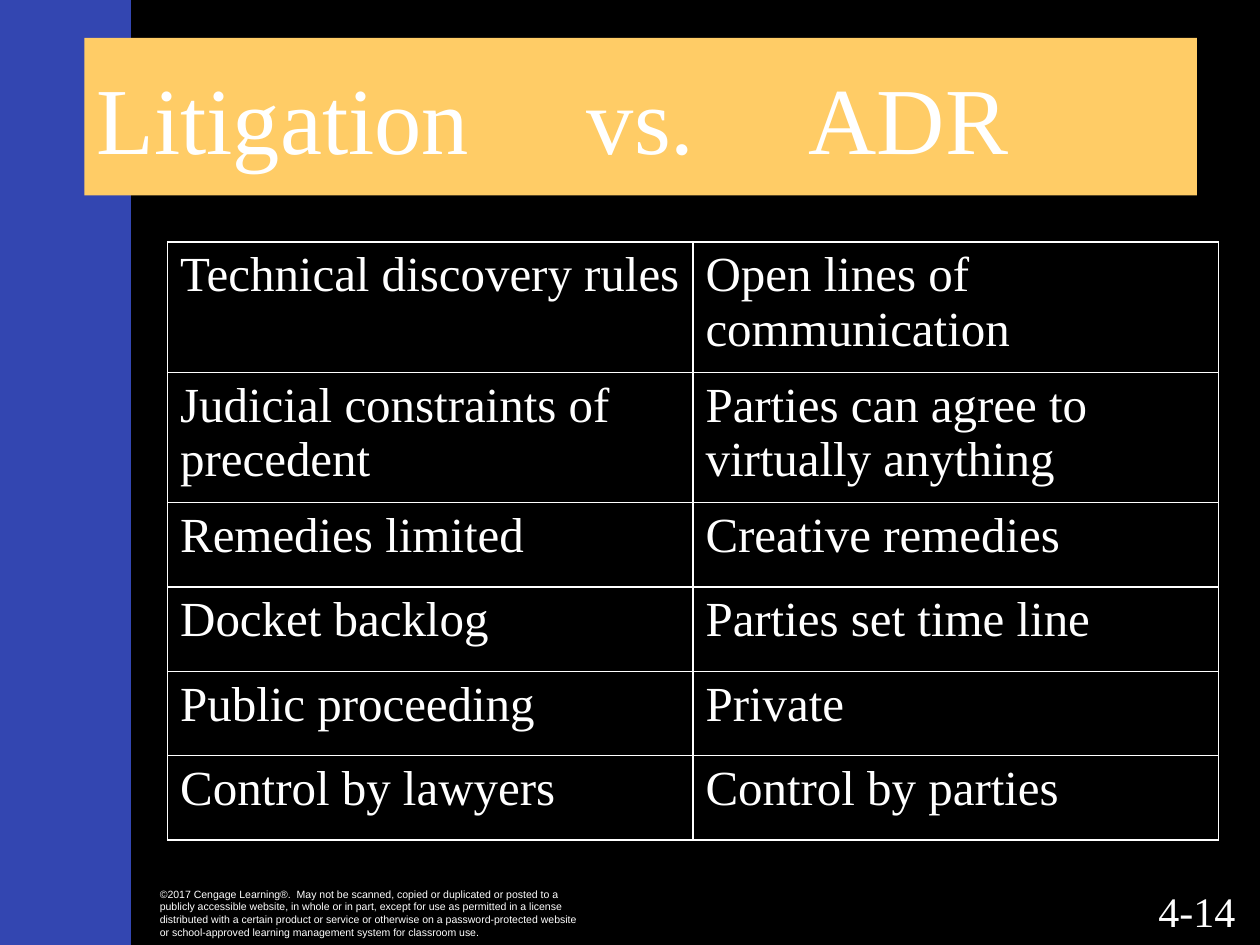
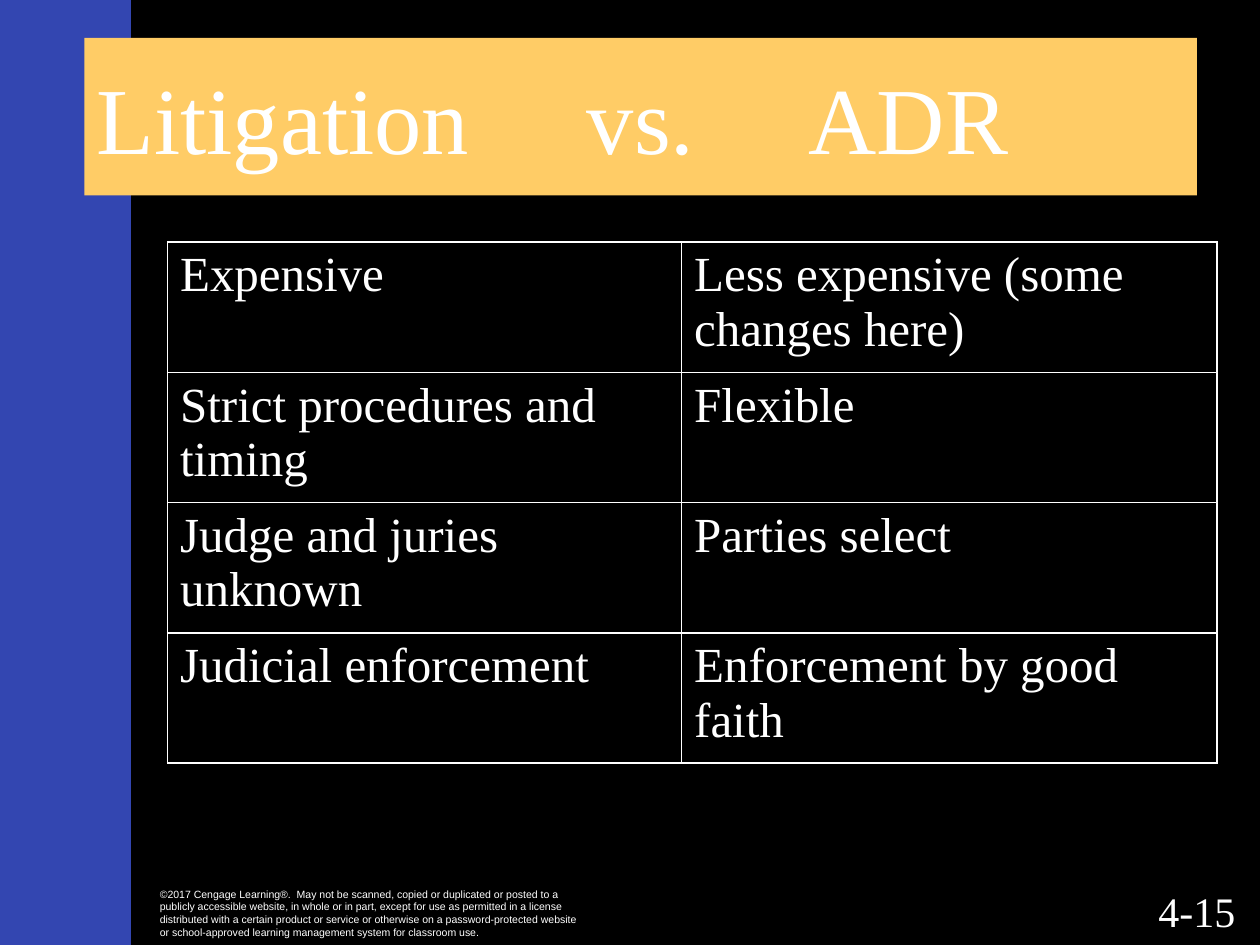
from lxml.etree import SubElement
from pptx import Presentation
from pptx.dml.color import RGBColor
from pptx.enum.shapes import MSO_SHAPE
from pptx.enum.text import MSO_ANCHOR, PP_ALIGN
from pptx.oxml.ns import qn
from pptx.util import Inches, Pt

BLUE, BLACK, GOLD, WHITE = "3346B1", "000000", "FFCC66", "FFFFFF"
SERIF, SANS = "Times New Roman", "Arial"
TITLE = "Litigation\tvs.\tADR"
TABS = [3.89, 5.65]
NOTICE = (
    "©2017 Cengage Learning®.  May not be scanned, copied or duplicated or posted to a "
    "publicly accessible website, in whole or in part, except for use as permitted in a license "
    "distributed with a certain product or service or otherwise on a password-protected website "
    "or school-approved learning management system for classroom use."
)

PAGES = [
    ("4-14", [4.17, 4.17], [0.99, 0.99] + [0.67] * 4, [
        ("Technical discovery rules", "Open lines of communication"),
        ("Judicial constraints of precedent", "Parties can agree to virtually anything"),
        ("Remedies limited", "Creative remedies"),
        ("Docket backlog", "Parties set time line"),
        ("Public proceeding", "Private"),
        ("Control by lawyers", "Control by parties"),
    ]),
    ("4-15", [4.08, 4.25], [1.01] * 4, [
        ("Expensive", "Less expensive (some changes here)"),
        ("Strict procedures and timing", "Flexible"),
        ("Judge and juries unknown", "Parties select"),
        ("Judicial enforcement", "Enforcement by good faith"),
    ]),
]


def paint(fill, color):
    fill.solid()
    fill.fore_color.rgb = RGBColor.from_string(color)


def write(frame, text, size, face=SERIF, align=PP_ALIGN.LEFT):
    frame.word_wrap = True
    para = frame.paragraphs[0]
    para.text = text
    para.alignment = align
    for run in para.runs:
        run.font.size = Pt(size)
        run.font.name = face
        paint(run.font.fill, WHITE)
    return para


deck = Presentation()
deck.slide_width, deck.slide_height = Inches(10), Inches(7.5)

for number, widths, heights, rows in PAGES:
    slide = deck.slides.add_slide(deck.slide_layouts[6])
    paint(slide.background.fill, BLUE)
    shapes = slide.shapes

    bands = []
    for color, box in [(BLACK, (1.04, 0, 8.96, 7.5)), (GOLD, (0.67, 0.3, 8.83, 1.25))]:
        band = shapes.add_shape(MSO_SHAPE.RECTANGLE, *map(Inches, box))
        band.shadow.inherit = False
        band.line.fill.background()
        paint(band.fill, color)
        bands.append(band)

    title = bands[1].text_frame
    title.vertical_anchor = MSO_ANCHOR.MIDDLE
    para = write(title, TITLE, 54)
    stops = SubElement(para._p.get_or_add_pPr(), qn("a:tabLst"))
    for stop in TABS:
        SubElement(stops, qn("a:tab"), pos=str(Inches(stop)), algn="l")

    notice = shapes.add_textbox(*map(Inches, (1.17, 6.99, 3.58, 0.51))).text_frame
    notice.vertical_anchor = MSO_ANCHOR.MIDDLE
    write(notice, NOTICE, 6, SANS)

    folio = shapes.add_textbox(*map(Inches, (9, 6.98, 1, 0.52))).text_frame
    write(folio, number, 24, align=PP_ALIGN.CENTER)

    size = (1.33, 1.92, sum(widths), sum(heights))
    table = shapes.add_table(len(rows), 2, *map(Inches, size)).table
    table.first_row = table.horz_banding = False
    for column, width in zip(table.columns, widths):
        column.width = Inches(width)
    for row, height, texts in zip(table.rows, heights, rows):
        row.height = Inches(height)
        for cell, text in zip(row.cells, texts):
            write(cell.text_frame, text, 28)
            props = cell._tc.get_or_add_tcPr()
            for side in "LRTB":
                edge = SubElement(props, qn("a:ln" + side), w=str(Pt(1)))
                SubElement(SubElement(edge, qn("a:solidFill")), qn("a:srgbClr"), val=WHITE)
            cell.fill.background()

deck.save("out.pptx")
